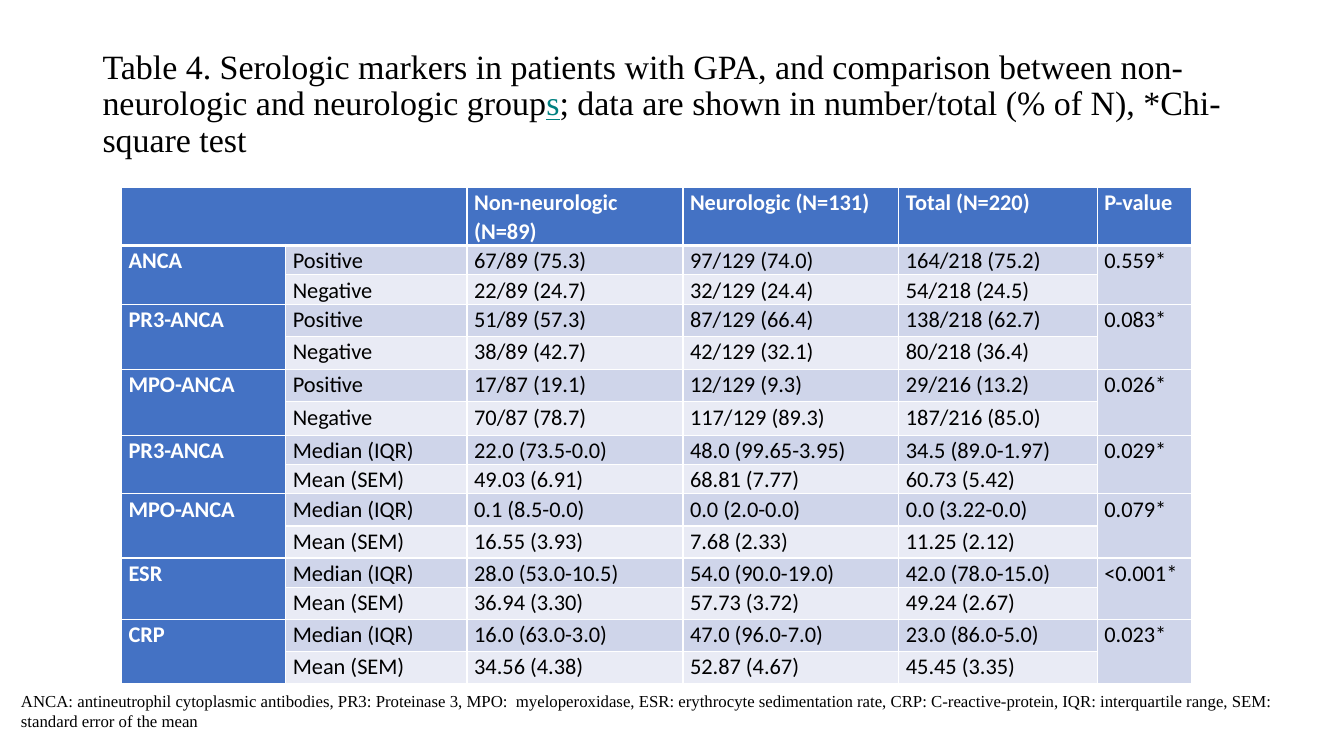
from lxml import etree
from pptx import Presentation
from pptx.dml.color import RGBColor
from pptx.enum.text import MSO_ANCHOR, MSO_AUTO_SIZE, PP_ALIGN
from pptx.oxml.ns import qn
from pptx.util import Cm, Pt

LEFT, JUSTIFY = PP_ALIGN.LEFT, PP_ALIGN.JUSTIFY
MIDDLE = MSO_ANCHOR.MIDDLE
NO_FIT, GROW = MSO_AUTO_SIZE.NONE, MSO_AUTO_SIZE.SHAPE_TO_FIT_TEXT

COLORS = {
    "text": "000000",
    "white": "FFFFFF",
    "teal": "008080",
    "header": "4472C4",
    "dark_band": "CFD5EA",
    "light_band": "E9EBF5",
}
SERIF, SANS = "Times New Roman", "Calibri"

COLUMN_WIDTHS = [4.14, 4.57, 5.44, 5.44, 5.0, 2.39]
ROW_HEIGHTS = [1.35, 0.71, 0.66, 0.81, 0.84, 0.81, 0.84, 0.66,
               0.66, 0.81, 0.81, 0.66, 0.81, 0.81, 0.81]
HEADINGS = ["", "", "Non-neurologic (N=89)", "Neurologic (N=131)", "Total (N=220)", "P-value"]
SIGN = ("Positive", "Negative")
AVERAGE = ("Median (IQR)", "Mean (SEM)")
MARKERS = [
    ("ANCA", "0.559*", SIGN,
     ["67/89 (75.3)", "97/129 (74.0)", "164/218 (75.2)"],
     ["22/89 (24.7)", "32/129 (24.4)", "54/218 (24.5)"]),
    ("PR3-ANCA", "0.083*", SIGN,
     ["51/89 (57.3)", "87/129 (66.4)", "138/218 (62.7)"],
     ["38/89 (42.7)", "42/129 (32.1)", "80/218 (36.4)"]),
    ("MPO-ANCA", "0.026*", SIGN,
     ["17/87 (19.1)", "12/129 (9.3)", "29/216 (13.2)"],
     ["70/87 (78.7)", "117/129 (89.3)", "187/216 (85.0)"]),
    ("PR3-ANCA", "0.029*", AVERAGE,
     ["22.0 (73.5-0.0)", "48.0 (99.65-3.95)", "34.5 (89.0-1.97)"],
     ["49.03 (6.91)", "68.81 (7.77)", "60.73 (5.42)"]),
    ("MPO-ANCA", "0.079*", AVERAGE,
     ["0.1 (8.5-0.0)", "0.0 (2.0-0.0)", "0.0 (3.22-0.0)"],
     ["16.55 (3.93)", "7.68 (2.33)", "11.25 (2.12)"]),
    ("ESR", "<0.001*", AVERAGE,
     ["28.0 (53.0-10.5)", "54.0 (90.0-19.0)", "42.0 (78.0-15.0)"],
     ["36.94 (3.30)", "57.73 (3.72)", "49.24 (2.67)"]),
    ("CRP", "0.023*", AVERAGE,
     ["16.0 (63.0-3.0)", "47.0 (96.0-7.0)", "23.0 (86.0-5.0)"],
     ["34.56 (4.38)", "52.87 (4.67)", "45.45 (3.35)"]),
]


def color(name):
    """Return the named colour."""
    return RGBColor.from_string(COLORS[name])


def add_run(paragraph, text, size, face, shade="text"):
    """Append a formatted run and return it."""
    run = paragraph.add_run()
    run.text = text
    run.font.size, run.font.name = Pt(size), face
    run.font.color.rgb = color(shade)
    return run


def place_title(title, left, top, width, height):
    """Fill the title placeholder in the given box."""
    title.left, title.top, title.width, title.height = left, top, width, height
    frame = title.text_frame
    frame.auto_size, frame.vertical_anchor = NO_FIT, MIDDLE
    heading = frame.paragraphs[0]
    heading.alignment, heading.line_spacing = LEFT, 0.9
    add_run(heading, "Table 4. Serologic markers in patients with GPA, and comparison "
            "between non-neurologic and neurologic group", 24.3, SERIF)
    add_run(heading, "s", 24.3, SERIF, "teal").font.underline = True
    add_run(heading, "; data are shown in number/total (% of N), *Chi-square test", 24.3, SERIF)
    heading.add_line_break()


def set_borders(cell, row):
    """Draw white cell borders, thicker below the header row."""
    properties = cell._tc.get_or_add_tcPr()
    thick = {0: "lnB", 1: "lnT"}.get(row)
    for position, side in enumerate(("lnL", "lnR", "lnT", "lnB")):
        line = etree.Element(qn(f"a:{side}"), w=str(Pt(3 if side == thick else 1)))
        fill = etree.SubElement(line, qn("a:solidFill"))
        etree.SubElement(fill, qn("a:srgbClr"), val=COLORS["white"])
        properties.insert(position, line)


def format_cell(cell, text, row, column):
    """Write a cell and style it by its row and column."""
    is_heading = row == 0 or column == 0
    is_light = row % 2 == 0 and column < len(HEADINGS) - 1
    cell.fill.solid()
    cell.fill.fore_color.rgb = color(
        "header" if is_heading else "light_band" if is_light else "dark_band")
    cell.margin_left = cell.margin_right = Cm(0.18)
    cell.margin_top = cell.margin_bottom = 0
    entry = cell.text_frame.paragraphs[0]
    entry.text = text
    entry.alignment, entry.line_spacing, entry.space_after = JUSTIFY, 1.07, Pt(8)
    entry.font.name, entry.font.size, entry.font.bold = SANS, Pt(16), is_heading
    entry.font.color.rgb = color("white" if is_heading else "text")
    set_borders(cell, row)


def place_markers(slide, left, top, width, height):
    """Add the table of serologic markers in the given box."""
    rows = [HEADINGS]
    for marker, p_value, measures, first, second in MARKERS:
        rows.append([marker, measures[0], *first, p_value])
        rows.append(["", measures[1], *second, ""])
    table = slide.shapes.add_table(len(rows), len(HEADINGS), left, top, width, height).table
    for column, column_width in zip(table.columns, COLUMN_WIDTHS):
        column.width = Cm(column_width)
    for row, row_height in zip(table.rows, ROW_HEIGHTS):
        row.height = Cm(row_height)
    for r, row in enumerate(rows):
        for c, text in enumerate(row):
            format_cell(table.cell(r, c), text, r, c)
    table.cell(0, 0).merge(table.cell(0, 1))
    for r in range(1, len(rows), 2):
        for c in (0, len(HEADINGS) - 1):
            table.cell(r, c).merge(table.cell(r + 1, c))


def place_abbreviations(slide, left, top, width, height):
    """Add the list of abbreviations in the given box."""
    frame = slide.shapes.add_textbox(left, top, width, height).text_frame
    frame.word_wrap, frame.auto_size, frame.vertical_anchor = True, GROW, MIDDLE
    note = frame.paragraphs[0]
    add_run(note, "ANCA: antineutrophil cytoplasmic antibodies, PR3:", 12, SERIF)
    add_run(note, " ", 11, SANS)
    add_run(note, "Proteinase 3, MPO:  myeloperoxidase, ESR: erythrocyte sedimentation rate, "
            "CRP: C-reactive-protein, IQR: interquartile range, "
            "SEM: standard error of the mean", 12, SERIF)


def main():
    """Build and save the slide."""
    deck = Presentation()
    deck.slide_width, deck.slide_height = Cm(33.87), Cm(19.05)
    slide = deck.slides.add_slide(deck.slide_layouts[5])
    place_title(slide.shapes.title, Cm(2.33), Cm(2.44), Cm(29.21), Cm(2.26))
    place_markers(slide, Cm(3.06), Cm(4.71), Cm(sum(COLUMN_WIDTHS)), Cm(sum(ROW_HEIGHTS)))
    place_abbreviations(slide, Cm(0.28), Cm(17.27), Cm(32.44), Cm(1.27))
    deck.save("out.pptx")


if __name__ == "__main__":
    main()
